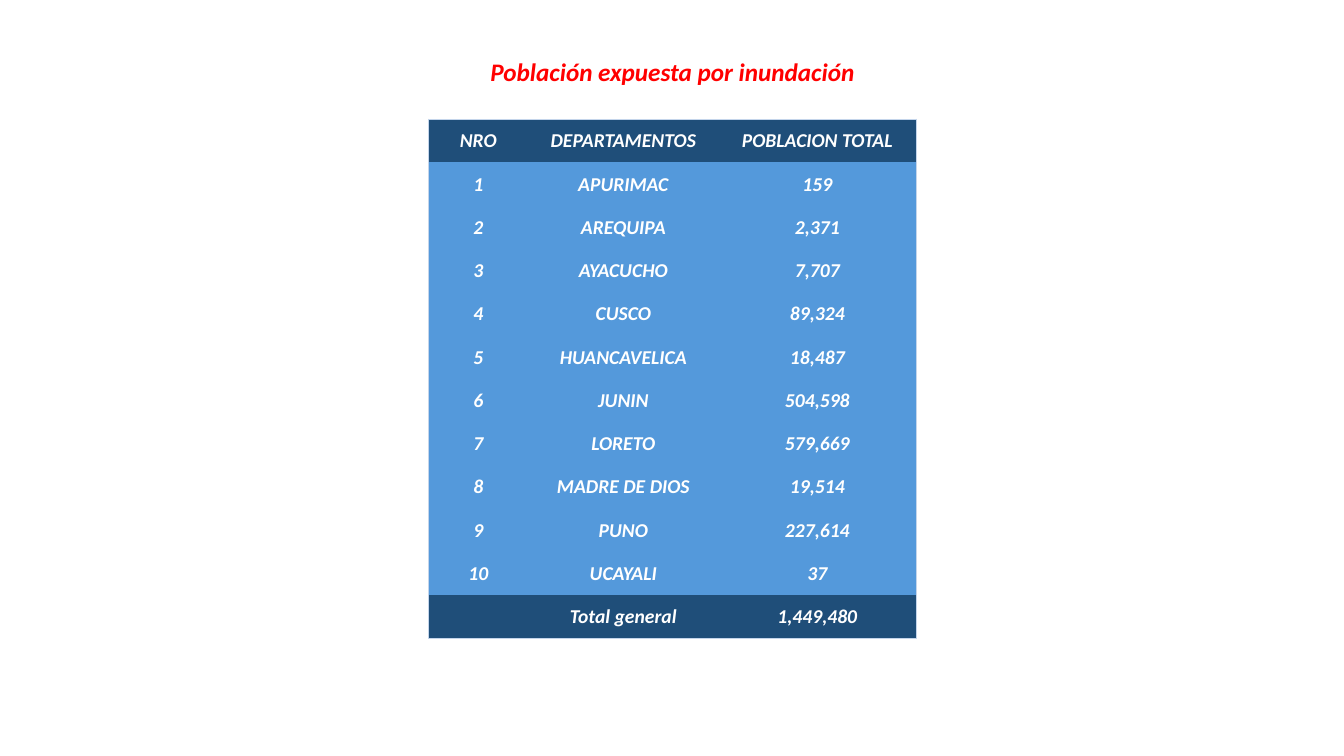
from lxml import etree
from pptx import Presentation
from pptx.dml.color import RGBColor
from pptx.enum.text import MSO_ANCHOR, MSO_AUTO_SIZE, PP_ALIGN
from pptx.oxml.ns import qn
from pptx.util import Cm, Pt

COLORS = {
    "title": "FF0000",
    "text": "FFFFFF",
    "dark": "1F4E79",
    "body": "5499DB",
    "border": "C4D5EB",
}
FONT = "Calibri"
HEADER = ("NRO", "DEPARTAMENTOS", "POBLACION TOTAL")
DEPARTMENTS = [
    ("APURIMAC", "159"),
    ("AREQUIPA", "2,371"),
    ("AYACUCHO", "7,707"),
    ("CUSCO", "89,324"),
    ("HUANCAVELICA", "18,487"),
    ("JUNIN", "504,598"),
    ("LORETO", "579,669"),
    ("MADRE DE DIOS", "19,514"),
    ("PUNO", "227,614"),
    ("UCAYALI", "37"),
]
TOTAL = ("", "Total general", "1,449,480")
COL_WIDTHS = (2.51, 4.8, 4.98)
ROW_HEIGHT = 1.09


def rgb(name):
    return RGBColor.from_string(COLORS[name])


def write_text(tf, text, size, color):
    p = tf.paragraphs[0]
    p.alignment = PP_ALIGN.CENTER
    r = p.add_run()
    r.text = text
    r.font.name = FONT
    r.font.size = Pt(size)
    r.font.bold = r.font.italic = True
    r.font.color.rgb = rgb(color)


def add_title(slide, text):
    sp = slide.shapes.add_textbox(Cm(12.06), Cm(1.3), Cm(9.78), Cm(1.02))
    tf = sp.text_frame
    tf.word_wrap = False
    tf.auto_size = MSO_AUTO_SIZE.SHAPE_TO_FIT_TEXT
    write_text(tf, text, 18, "title")


def set_borders(cell, outer):
    """Draw a thin line on the sides named in outer and none on the others."""
    tc_pr = cell._tc.get_or_add_tcPr()
    for side in "LRTB":
        ln = etree.SubElement(tc_pr, qn(f"a:ln{side}"), w=str(Pt(0.5)))
        if side in outer:
            fill = etree.SubElement(ln, qn("a:solidFill"))
            etree.SubElement(fill, qn("a:srgbClr"), val=COLORS["border"])
        else:
            etree.SubElement(ln, qn("a:noFill"))


def format_cell(cell, text, fill, outer):
    set_borders(cell, outer)
    cell.fill.solid()
    cell.fill.fore_color.rgb = rgb(fill)
    cell.vertical_anchor = MSO_ANCHOR.MIDDLE
    cell.margin_left = cell.margin_right = cell.margin_top = Cm(0.02)
    cell.margin_bottom = Cm(0)
    write_text(cell.text_frame, text, 14, "text")


def add_population_table(slide, rows):
    last_row, last_col = len(rows) - 1, len(COL_WIDTHS) - 1
    table = slide.shapes.add_table(
        len(rows), len(COL_WIDTHS), Cm(10.8), Cm(3),
        Cm(sum(COL_WIDTHS)), Cm(ROW_HEIGHT * len(rows))).table
    for column, width in zip(table.columns, COL_WIDTHS):
        column.width = Cm(width)
    for i, row in enumerate(rows):
        table.rows[i].height = Cm(ROW_HEIGHT)
        fill = "dark" if i in (0, last_row) else "body"
        for j, text in enumerate(row):
            edges = {"L": j == 0, "R": j == last_col, "T": i == 0, "B": i == last_row}
            outer = [side for side, on_edge in edges.items() if on_edge]
            format_cell(table.cell(i, j), text, fill, outer)


def main():
    prs = Presentation()
    prs.slide_width, prs.slide_height = Cm(33.87), Cm(19.05)
    slide = prs.slides.add_slide(prs.slide_layouts[6])
    add_title(slide, "Población expuesta por inundación")
    numbered = [(str(n), *entry) for n, entry in enumerate(DEPARTMENTS, 1)]
    add_population_table(slide, [HEADER, *numbered, TOTAL])
    prs.save("out.pptx")


if __name__ == "__main__":
    main()
